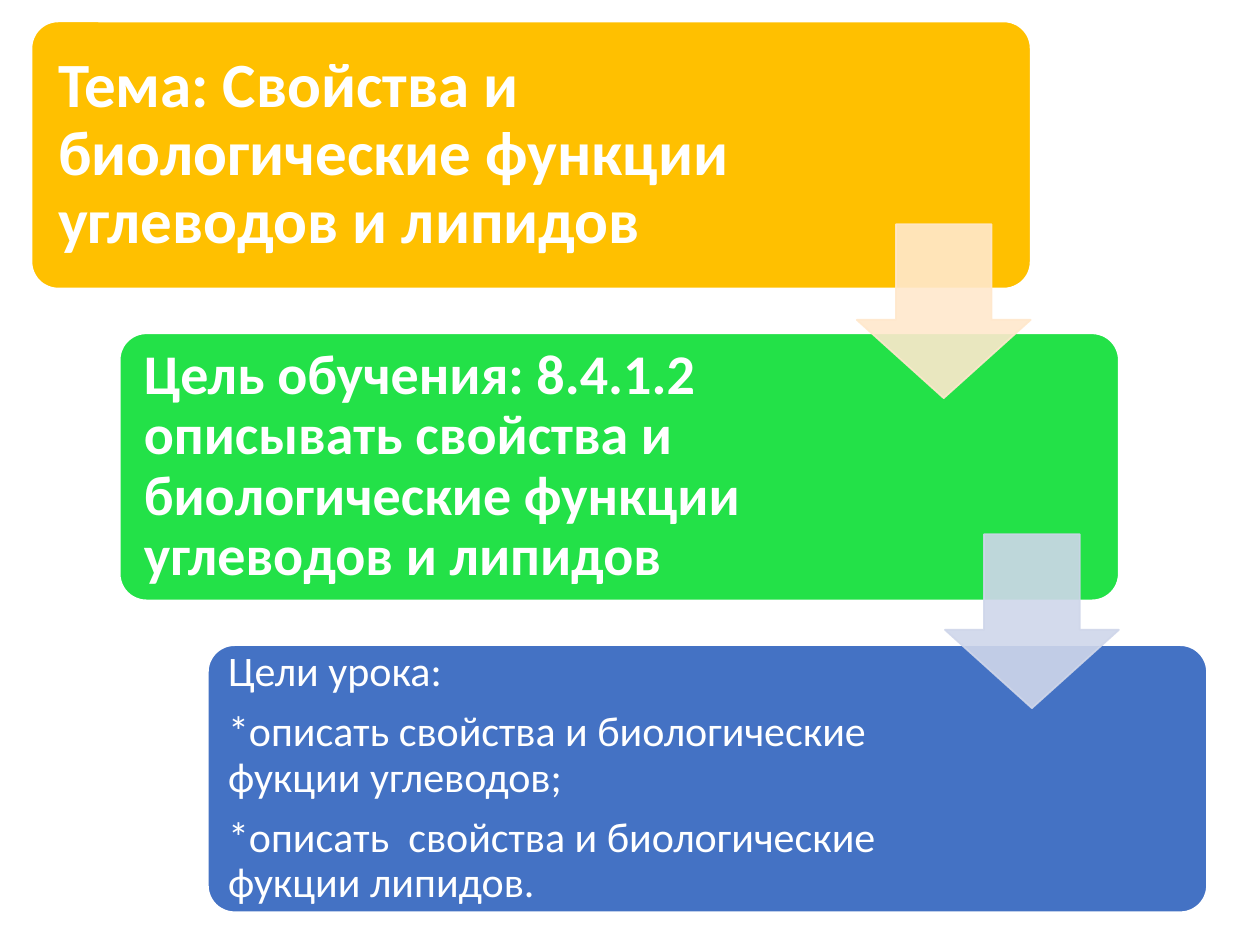
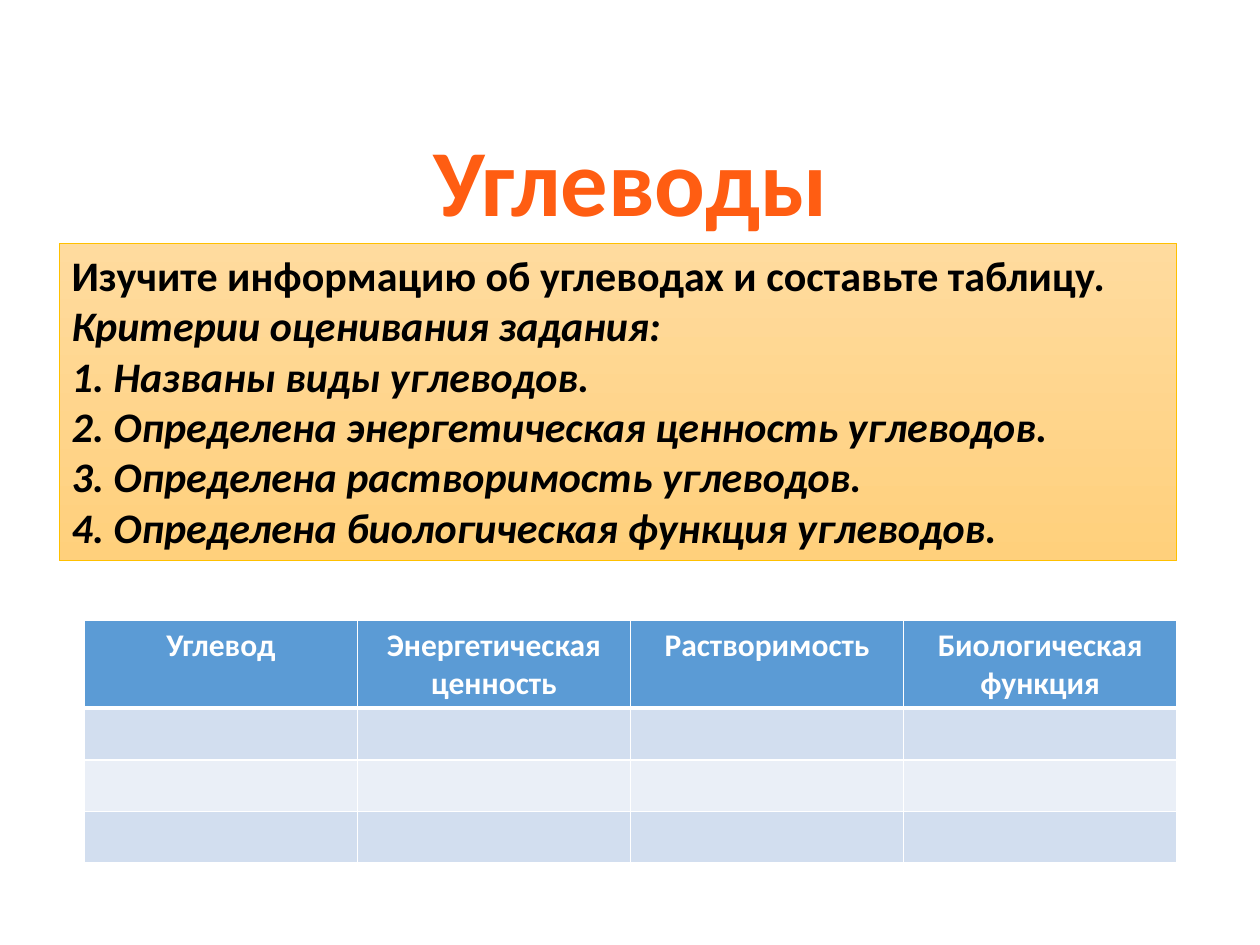
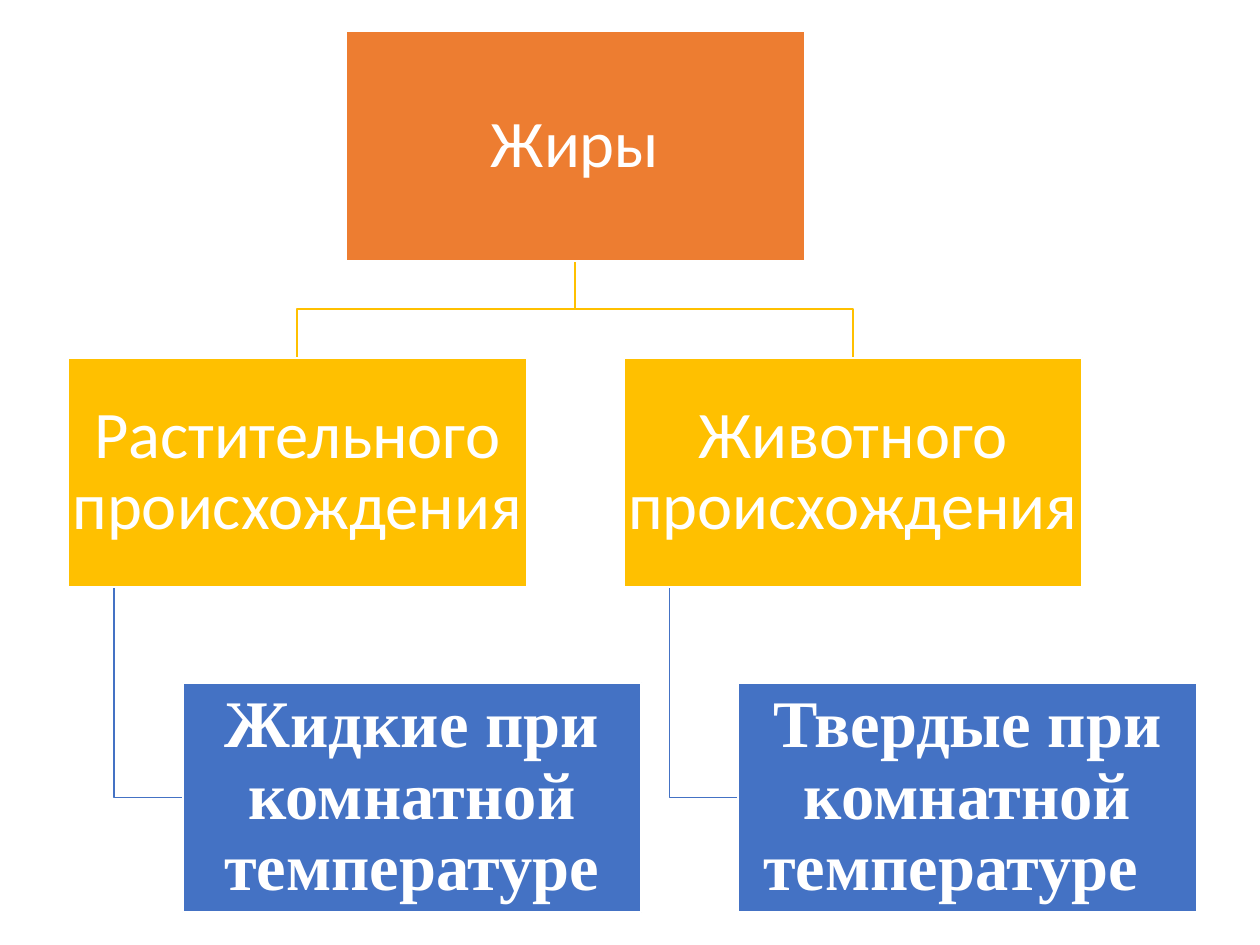
from pptx import Presentation
from pptx import util as u
from pptx.dml.color import RGBColor
from pptx.enum import shapes, text
from pptx.oxml import ns, xmlchemy

PX = 9144
WHITE = RGBColor(0xFF, 0xFF, 0xFF)
BLACK = RGBColor(0x00, 0x00, 0x00)
AMBER = RGBColor(0xFF, 0xC0, 0x00)
GREEN = RGBColor(0x23, 0xE1, 0x48)
BLUE = RGBColor(0x44, 0x72, 0xC4)
ORANGE = RGBColor(0xED, 0x7D, 0x31)
TITLE_ORANGE = RGBColor(0xFF, 0x5D, 0x12)
PEACH = RGBColor(0xFF, 0xE8, 0xCC)
LAVENDER = RGBColor(0xCF, 0xD6, 0xEA)
SAND_LIGHT = RGBColor(0xFF, 0xDB, 0x9E)
SAND_DARK = RGBColor(0xFF, 0xD0, 0x7C)
HEADER_BLUE = RGBColor(0x5B, 0x9B, 0xD5)
BAND_DARK = RGBColor(0xD2, 0xDE, 0xEF)
BAND_LIGHT = RGBColor(0xEA, 0xEF, 0xF7)

SANS = {"name": "Calibri", "bold": False}
SANS_BOLD = {"name": "Calibri", "bold": True}
SANS_BOLD_ITALIC = {"name": "Calibri", "bold": True, "italic": True}
SERIF_BOLD = {"name": "Times New Roman", "bold": True}
LEFT = text.PP_ALIGN.LEFT
CENTER = text.PP_ALIGN.CENTER
KIND = shapes.MSO_SHAPE
DIAGRAM_SPACING = {"line_spacing": 0.9}


def px(*lengths):
    return [u.Emu(round(length * PX)) for length in lengths]


def set_all(target, values):
    for name, value in values.items():
        setattr(target, name, value)


class Pages:
    def __init__(self, width, height):
        self.deck = Presentation()
        self.deck.slide_width, self.deck.slide_height = px(width, height)
        self.page = None

    def new_page(self):
        self.page = self.deck.slides.add_slide(self.deck.slide_layouts[6])

    def add_lines(self, frame, lines, size, color, align=LEFT, spacing=None):
        for index, (words, style) in enumerate(lines):
            para = frame.paragraphs[0] if index == 0 else frame.add_paragraph()
            para.alignment = align
            if spacing:
                set_all(para, {**spacing, "space_after": u.Pt(round(size * 0.35, 1))})
            span = para.add_run()
            span.text = words
            set_all(span.font, {**style, "size": u.Pt(size)})
            span.font.color.rgb = color

    def frame(self, box, insets, anchor=text.MSO_ANCHOR.MIDDLE):
        left, top, right, bottom = px(*insets)
        set_all(box.text_frame, {
            "word_wrap": True, "vertical_anchor": anchor,
            "margin_left": left, "margin_top": top,
            "margin_right": right, "margin_bottom": bottom,
        })
        return box.text_frame

    def shape(self, kind, place, fill, line=WHITE, width=1, adjust=()):
        box = self.page.shapes.add_shape(kind, *px(*place))
        box.shadow.inherit = False
        for index, value in enumerate(adjust):
            box.adjustments[index] = value
        if isinstance(fill, tuple) and not isinstance(fill, RGBColor):
            box.fill.gradient()
            box.fill.gradient_angle = 270
            for stop, color in zip(box.fill.gradient_stops, fill):
                stop.color.rgb = color
        else:
            box.fill.solid()
            box.fill.fore_color.rgb = fill
        box.line.color.rgb = line
        box.line.width = u.Pt(width)
        return box

    def arrow(self, place, color):
        box = self.shape(KIND.DOWN_ARROW, place, color, color, adjust=(0.55, 0.45))
        for tint in list(box.element.spPr.iter(ns.qn("a:srgbClr"))):
            alpha = xmlchemy.OxmlElement("a:alpha")
            alpha.set("val", "90000")
            tint.append(alpha)

    def polyline(self, points, color):
        start, *rest = [px(*point) for point in points]
        builder = self.page.shapes.build_freeform(*start)
        builder.add_line_segments(rest, close=False)
        line = builder.convert_to_shape()
        line.shadow.inherit = False
        line.fill.background()
        line.line.color.rgb = color
        line.line.width = u.Pt(1)

    def title(self, place, words):
        box = self.page.shapes.add_textbox(*px(*place))
        box.text_frame.word_wrap = False
        self.add_lines(box.text_frame, [(words, SANS_BOLD)], 54, TITLE_ORANGE, CENTER)

    def borders(self, cell, widths):
        props = cell._tc.get_or_add_tcPr()
        for side, width in widths.items():
            edge = xmlchemy.OxmlElement(f"a:ln{side}")
            edge.set("w", str(int(u.Pt(width))))
            fill = xmlchemy.OxmlElement("a:solidFill")
            color = xmlchemy.OxmlElement("a:srgbClr")
            color.set("val", str(WHITE))
            fill.append(color)
            edge.append(fill)
            props.append(edge)

    def table(self, place, headings, row_heights, fills):
        rows = len(row_heights)
        grid = self.page.shapes.add_table(rows, len(headings), *px(*place)).table
        for row, (height, fill) in enumerate(zip(row_heights, fills)):
            grid.rows[row].height = px(height)[0]
            for column, heading in enumerate(headings):
                cell = grid.cell(row, column)
                self.borders(cell, {"L": 1, "R": 1, "T": 3 if row == 1 else 1,
                                    "B": 3 if row == 0 else 1})
                cell.fill.solid()
                cell.fill.fore_color.rgb = fill
                if row == 0:
                    self.add_lines(cell.text_frame, [(heading, SANS_BOLD)], 18, WHITE, CENTER)


def goals_page(pages):
    pages.new_page()
    steps = [
        (AMBER, 36, 15, 217, [("Тема: Свойства и биологические функции углеводов и липидов", SANS_BOLD)]),
        (GREEN, 32, 13, 208, [("Цель обучения: 8.4.1.2 описывать свойства и биологические "
                               "функции углеводов и липидов", SANS_BOLD)]),
        (BLUE, 24, 10, 208, [
            ("Цели урока:", SANS),
            ("*описать свойства и биологические фукции углеводов;", SANS),
            ("*описать  свойства и биологические фукции липидов.", SANS),
        ]),
    ]
    for index, (color, size, inset, arrow_room, lines) in enumerate(steps):
        place = (25 + 70 * index, 17 + 247.5 * index, 793, 212)
        box = pages.shape(KIND.ROUNDED_RECTANGLE, place, color, adjust=(0.1,))
        frame = pages.frame(box, (inset, inset, inset + arrow_room, inset))
        pages.add_lines(frame, lines, size, WHITE, spacing=DIAGRAM_SPACING)
    for index, color in enumerate((PEACH, LAVENDER)):
        pages.arrow((680 + 70 * index, 178 + 246 * index, 138, 138), color)


def carbohydrates_page(pages):
    pages.new_page()
    pages.title((333, 92, 335, 101), "Углеводы")
    task = pages.shape(KIND.RECTANGLE, (47, 193, 887, 252), (SAND_LIGHT, SAND_DARK), AMBER, 0.5)
    criteria = [
        "Критерии оценивания задания:",
        "1. Названы виды углеводов.",
        "2. Определена энергетическая ценность углеводов.",
        "3. Определена растворимость углеводов.",
        "4. Определена биологическая функция углеводов.",
    ]
    lines = [("Изучите информацию об углеводах и составьте таблицу.", SANS_BOLD)]
    lines += [(words, SANS_BOLD_ITALIC) for words in criteria]
    pages.add_lines(pages.frame(task, (10, 5, 10, 5), text.MSO_ANCHOR.TOP), lines, 24, BLACK)
    pages.table(
        (67, 492, 867, 192),
        ["Углевод", "Энергетическая ценность", "Растворимость", "Биологическая функция"],
        [70, 41, 41, 41],
        [HEADER_BLUE, BAND_DARK, BAND_LIGHT, BAND_DARK],
    )


def fats_page(pages):
    pages.new_page()
    width, height = 364, 182
    root_top, origin_top, state_top = 25, 284, 542
    origin_lefts = (54, 495)
    root_left = sum(origin_lefts) / 2
    state_shift = 91
    root_middle, root_bottom = root_left + width / 2, root_top + height
    fork = (root_bottom + origin_top) / 2
    for left in origin_lefts:
        branch = left + width / 2
        pages.polyline([(root_middle, root_bottom), (root_middle, fork),
                        (branch, fork), (branch, origin_top)], AMBER)
        stem, state_middle = left + width / 10, state_top + height / 2
        pages.polyline([(stem, origin_top + height), (stem, state_middle),
                        (left + state_shift, state_middle)], BLUE)
    origins = ("Растительного происхождения", "Животного происхождения")
    states = ("Жидкие при комнатной температуре", "Твердые при комнатной температуре  ")
    nodes = [(root_left, root_top, ORANGE, "Жиры", SANS)]
    for left, origin, state in zip(origin_lefts, origins, states):
        nodes.append((left, origin_top, AMBER, origin, SANS))
        nodes.append((left + state_shift, state_top, BLUE, state, SERIF_BOLD))
    for left, top, color, words, style in nodes:
        box = pages.shape(KIND.RECTANGLE, (left, top, width, height), color)
        frame = pages.frame(box, (3, 3, 3, 3))
        pages.add_lines(frame, [(words, style)], 38, WHITE, CENTER, DIAGRAM_SPACING)


def main():
    pages = Pages(1000, 750)
    goals_page(pages)
    carbohydrates_page(pages)
    fats_page(pages)
    pages.deck.save("out.pptx")


if __name__ == "__main__":
    main()
